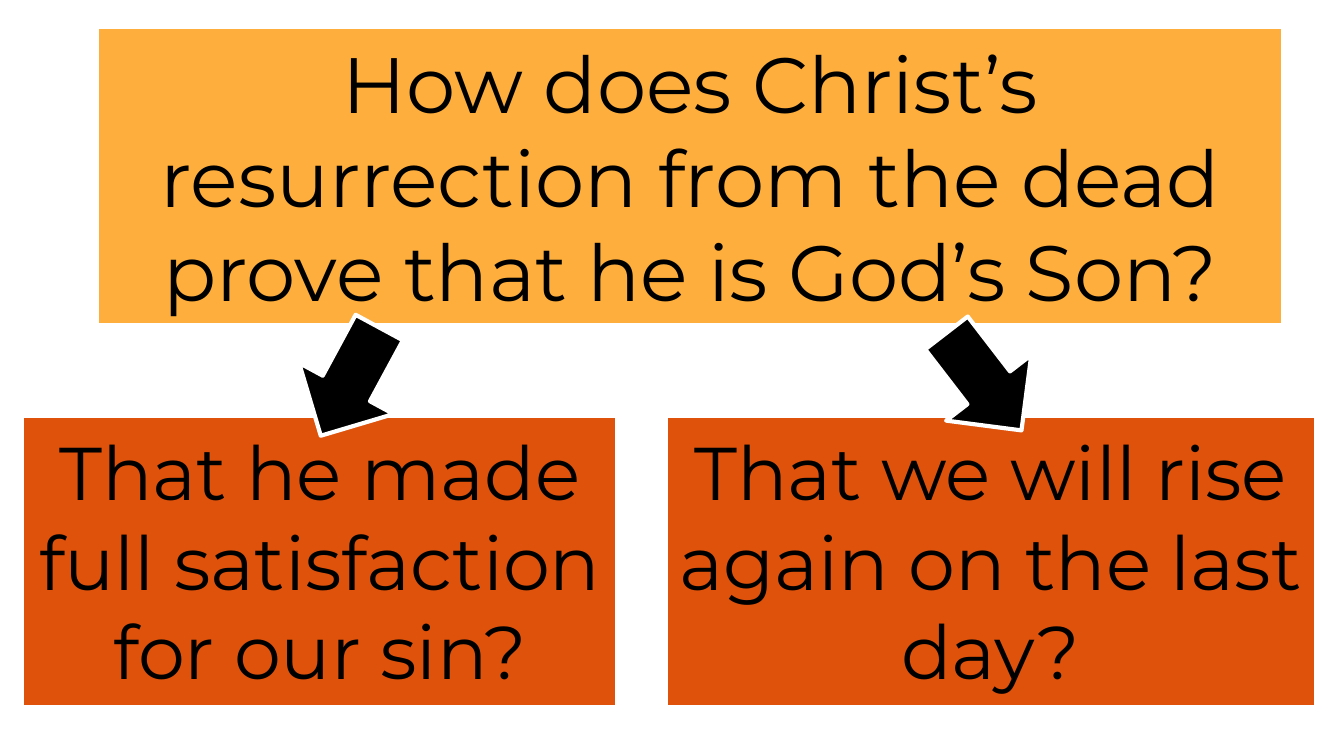
import collections
import dataclasses

import pptx
import pptx.dml.color
import pptx.enum.shapes
import pptx.enum.text
import pptx.util

Box = collections.namedtuple("Box", "x y w h")
SHAPE = pptx.enum.shapes.MSO_SHAPE
ANCHOR = pptx.enum.text.MSO_ANCHOR
COLUMNS, ROWS = 100, 56.25
CELL = pptx.util.Inches(0.1)


@dataclasses.dataclass(frozen=True)
class Theme:
    font: str = "Montserrat"
    question: str = "FDAE3C"
    answer: str = "DE520C"
    ink: str = "000000"
    paper: str = "FFFFFF"
    question_size: float = 42
    answer_size: float = 40
    panel_line: float = 6
    arrow_line: float = 2.25


THEME = Theme()


def rgb(value):
    return pptx.dml.color.RGBColor.from_string(value)


def add_shape(s, kind, box, fill, line_width):
    sp = s.shapes.add_shape(kind, *(round(v * CELL) for v in box))
    sp.shadow.inherit = False
    sp.fill.solid()
    sp.fill.fore_color.rgb = rgb(fill)
    sp.line.color.rgb = rgb(THEME.paper)
    sp.line.width = pptx.util.Pt(line_width)
    return sp


def add_panel(s, box, text, fill, size, anchor):
    sp = add_shape(s, SHAPE.RECTANGLE, box, fill, THEME.panel_line)
    tf = sp.text_frame
    tf.word_wrap = True
    tf.vertical_anchor = anchor
    tf.margin_left = tf.margin_right = tf.margin_top = tf.margin_bottom = CELL
    p = tf.paragraphs[0]
    p.text = text
    p.alignment = pptx.enum.text.PP_ALIGN.CENTER
    p.font.name = THEME.font
    p.font.size = pptx.util.Pt(size)
    p.font.color.rgb = rgb(THEME.ink)


def add_question(s, box, text):
    add_panel(s, box, text, THEME.question, THEME.question_size, ANCHOR.MIDDLE)


def add_answer(s, box, text, arrow_share, angle):
    add_panel(s, box, text, THEME.answer, THEME.answer_size, ANCHOR.TOP)
    w, h, rise = 9.15, 8, 6.3
    arrow_box = Box(box.x + box.w * arrow_share - w / 2, box.y - rise, w, h)
    arrow = add_shape(s, SHAPE.RIGHT_ARROW, arrow_box, THEME.ink, THEME.arrow_line)
    arrow.rotation = angle


def main():
    prs = pptx.Presentation()
    prs.slide_width = round(COLUMNS * CELL)
    prs.slide_height = round(ROWS * CELL)
    s = prs.slides.add_slide(prs.slide_layouts[6])
    add_question(
        s,
        Box(6.95, 1.75, 88.8, 22.7),
        "How does Christ’s resurrection from the dead prove that he is God’s Son?",
    )
    top, height = 30.7, 22.2
    answers = [
        (1.4, 44.8, "That he made full satisfaction for our sin?", 0.55, 118.4),
        (49.25, 48.9, "That we will rise again on the last day?", 0.49, 52.4),
    ]
    for left, width, text, arrow_share, angle in answers:
        add_answer(s, Box(left, top, width, height), text, arrow_share, angle)
    prs.save("out.pptx")


if __name__ == "__main__":
    main()
